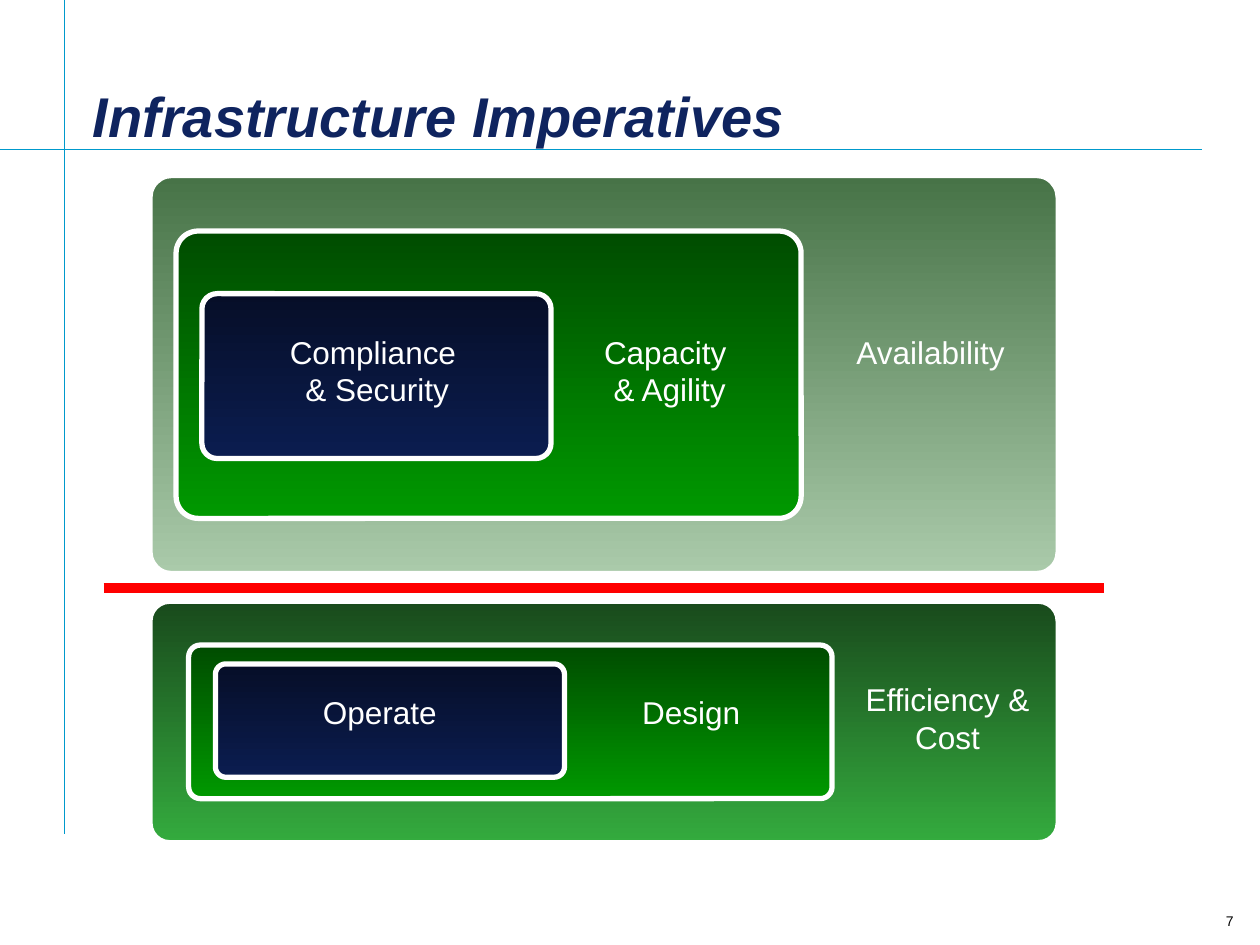
from dataclasses import dataclass
from typing import Any

from lxml.etree import SubElement
from pptx import Presentation
from pptx.dml.color import RGBColor as RGB
from pptx.enum.shapes import MSO_CONNECTOR as CONN, MSO_SHAPE as SHAPE
from pptx.enum.text import MSO_ANCHOR as ANCHOR, PP_ALIGN as ALIGN
from pptx.oxml.ns import qn
from pptx.util import Pt

COLORS = {
    "white": "FFFFFF", "black": "000000", "title": "0F245F",
    "guide": "0099CC", "divider": "FF0000",
}
GRADIENTS = {
    "sage": ("477347", "AACAAA"),
    "forest": ("194A1C", "34AB3E"),
    "green": ("004C00", "009900"),
    "navy": ("060E28", "0B1D50"),
}


@dataclass
class Deck:
    slide: Any
    font: str = "Arial"
    label_size: float = 18
    border: float = 3

    def line(self, x1, y1, x2, y2, color, width):
        ln = self.slide.shapes.add_connector(
            CONN.STRAIGHT, Pt(x1), Pt(y1), Pt(x2), Pt(y2))
        ln.line.color.rgb = RGB.from_string(COLORS[color])
        ln.line.width = Pt(width)
        SubElement(ln._element.spPr, qn("a:effectLst"))

    def panel(self, x, y, w, h, gradient, corner):
        """Rounded box, shaded from top to bottom, with a white border."""
        sp = self.slide.shapes.add_shape(
            SHAPE.ROUNDED_RECTANGLE, Pt(x), Pt(y), Pt(w), Pt(h))
        sp.adjustments[0] = corner
        sp.shadow.inherit = False
        sp.fill.gradient()
        sp.fill.gradient_angle = 270
        for stop, color in zip(sp.fill.gradient_stops, GRADIENTS[gradient]):
            stop.color.rgb = RGB.from_string(color)
        sp.line.color.rgb = RGB.from_string(COLORS["white"])
        sp.line.width = Pt(self.border)

    def text(self, x, y, w, h, text, size=None, color="white",
             align=ALIGN.CENTER, anchor=ANCHOR.TOP, emphasis=False, spacing=None):
        tf = self.slide.shapes.add_textbox(Pt(x), Pt(y), Pt(w), Pt(h)).text_frame
        tf.word_wrap = True
        tf.vertical_anchor = anchor
        tf.text = text
        for p in tf.paragraphs:
            p.alignment = align
            p.line_spacing = spacing
            for r in p.runs:
                r.font.name = self.font
                r.font.size = Pt(size or self.label_size)
                r.font.bold = r.font.italic = emphasis
                r.font.color.rgb = RGB.from_string(COLORS[color])


def main():
    prs = Presentation()
    prs.slide_width, prs.slide_height = Pt(720), Pt(540)
    deck = Deck(prs.slides.add_slide(prs.slide_layouts[6]))

    deck.line(37, 476.5, 37, 0, "guide", 0.75)
    deck.line(0, 85.6, 687, 85.6, "guide", 0.75)
    deck.text(46, 31.7, 598, 57, "Infrastructure Imperatives", 32, "title",
              ALIGN.LEFT, ANCHOR.BOTTOM, emphasis=True, spacing=0.85)

    panels = [
        (85.7, 343.6, 519, 138, "forest", 0.082),
        (85.7, 100.3, 519, 227.5, "sage", 0.055),
        (100.6, 132, 357.2, 164.2, "green", 0.077),
        (115.4, 167.8, 199.5, 94.2, "navy", 0.092),
        (107.8, 368.6, 367.7, 87.8, "green", 0.077),
        (123.1, 379.4, 199.5, 64.8, "navy", 0.092),
    ]
    for panel in panels:
        deck.panel(*panel)
    deck.line(59.3, 336, 630.9, 336, "divider", 6)

    labels = [
        (130.3, 186.5, 170.6, 51, "Compliance \n& Security"),
        (321.1, 186.5, 123.1, 51, "Capacity \n& Agility"),
        (461.5, 186.5, 140.4, 29, "Availability"),
        (131.8, 392.7, 170.6, 29, "Operate"),
        (333.4, 392.7, 123.1, 29, "Design"),
        (475.2, 385.2, 132.5, 51, "Efficiency & Cost"),
    ]
    for label in labels:
        deck.text(*label)
    deck.text(683.3, 517.7, 28.8, 22.3, "7", 8, "black", ALIGN.RIGHT)

    prs.save("out.pptx")


if __name__ == "__main__":
    main()
